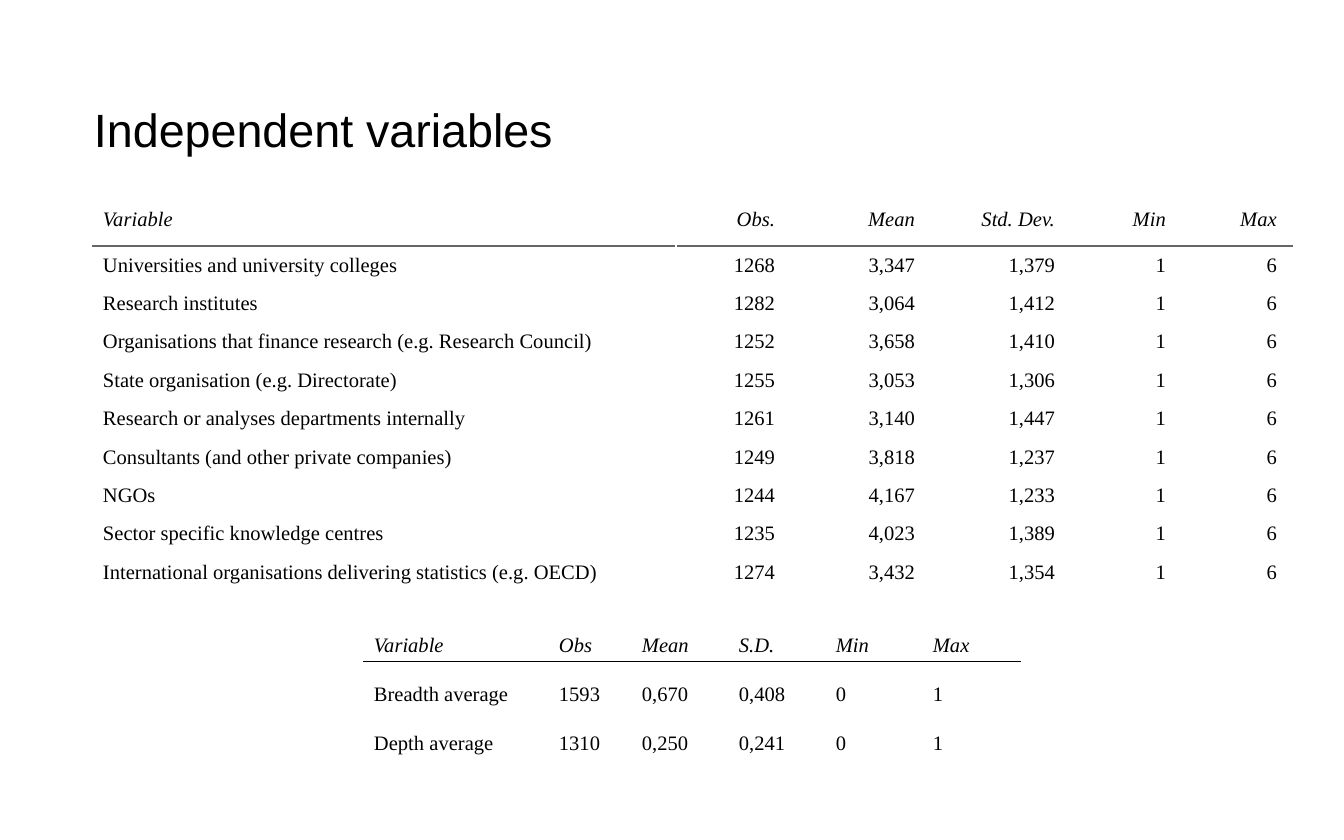
"""Build the slide with two tables of descriptive statistics for the independent variables."""
from dataclasses import dataclass

from lxml import etree
from pptx import Presentation
from pptx import util as u
from pptx.dml.color import RGBColor
from pptx.enum import text
from pptx.oxml import ns

PX = 914400 / 134.4
COLORS = {"text": "000000", "rule": "666666", "strong_rule": "000000"}
SERIF, SANS = "Times New Roman", "Arial"
LEFT, RIGHT = text.PP_ALIGN.LEFT, text.PP_ALIGN.RIGHT
MIDDLE, BOTTOM = text.MSO_ANCHOR.MIDDLE, text.MSO_ANCHOR.BOTTOM


@dataclass(frozen=True)
class StatTable:
    left: int
    top: int
    height: int
    head_height: int
    widths: tuple[int, ...]
    header: tuple[str, ...]
    rows: tuple[tuple[str, ...], ...]
    rule: str
    anchor: text.MSO_ANCHOR
    number_align: text.PP_ALIGN
    head_columns: tuple[int, ...]
    body_columns: tuple[int, ...]


SOURCES = StatTable(
    left=93, top=194, height=398, head_height=52,
    widths=(583, 40, 74, 140, 140, 111, 111),
    header=("Variable", "Obs.", "Mean", "Std. Dev.", "Min", "Max"),
    rows=(
        ("Universities and university colleges", "1268", "3,347", "1,379", "1", "6"),
        ("Research institutes", "1282", "3,064", "1,412", "1", "6"),
        ("Organisations that finance research (e.g. Research Council)",
         "1252", "3,658", "1,410", "1", "6"),
        ("State organisation (e.g. Directorate)", "1255", "3,053", "1,306", "1", "6"),
        ("Research or analyses departments internally", "1261", "3,140", "1,447", "1", "6"),
        ("Consultants (and other private companies)", "1249", "3,818", "1,237", "1", "6"),
        ("NGOs", "1244", "4,167", "1,233", "1", "6"),
        ("Sector specific knowledge centres", "1235", "4,023", "1,389", "1", "6"),
        ("International organisations delivering statistics (e.g. OECD)",
         "1274", "3,432", "1,354", "1", "6"),
    ),
    rule="rule", anchor=MIDDLE, number_align=RIGHT,
    head_columns=(0, 2, 3, 4, 5, 6), body_columns=(0, 1, 3, 4, 5, 6),
)
AVERAGES = StatTable(
    left=364, top=627, height=131, head_height=33,
    widths=(185, 83, 97, 97, 97, 97),
    header=("Variable", "Obs", "Mean", "S.D.", "Min", "Max"),
    rows=(
        ("Breadth average", "1593", "0,670", "0,408", "0", "1"),
        ("Depth average", "1310", "0,250", "0,241", "0", "1"),
    ),
    rule="strong_rule", anchor=BOTTOM, number_align=LEFT,
    head_columns=tuple(range(6)), body_columns=tuple(range(6)),
)


def px(value: float) -> u.Emu:
    return u.Emu(round(value * PX))


def style(p, size: int, name: str, italic: bool = False) -> None:
    p.font.size = u.Pt(size)
    p.font.name = name
    p.font.bold = False
    p.font.italic = italic
    p.font.color.rgb = RGBColor.from_string(COLORS["text"])


def set_margins(target, left: int, right: int) -> None:
    target.margin_left, target.margin_right = px(left), px(right)
    target.margin_top = target.margin_bottom = px(5)


def add_rule(cell, edge: str, color: str) -> None:
    ln = etree.Element(ns.qn(f"a:{edge}"), w=str(u.Pt(0.75)))
    fill = etree.SubElement(ln, ns.qn("a:solidFill"))
    etree.SubElement(fill, ns.qn("a:srgbClr"), val=COLORS[color])
    cell._tc.get_or_add_tcPr().insert(0, ln)


def add_title(s, title: str) -> None:
    tf = s.shapes.add_textbox(px(83), px(55), px(1159), px(147)).text_frame
    tf.word_wrap = True
    tf.vertical_anchor = MIDDLE
    set_margins(tf, 11, 11)
    p = tf.paragraphs[0]
    p.text = title
    style(p, 25, SANS)


def add_stat_table(s, spec_: StatTable) -> None:
    records = (spec_.header, *spec_.rows)
    frame = s.shapes.add_table(
        len(records), len(spec_.widths), px(spec_.left), px(spec_.top),
        px(sum(spec_.widths)), px(spec_.height))
    table = frame.table
    table.first_row = table.horz_banding = False
    for column, width in zip(table.columns, spec_.widths):
        column.width = px(width)
    body_height = (spec_.height - spec_.head_height) / len(spec_.rows)
    for i, record in enumerate(records):
        table.rows[i].height = px(body_height if i else spec_.head_height)
        for cell in table.rows[i].cells:
            cell.fill.background()
            if i < 2:
                add_rule(cell, "lnT" if i else "lnB", spec_.rule)
        starts = spec_.body_columns if i else spec_.head_columns
        ends = (*starts[1:], len(spec_.widths))
        for j, (value, start, end) in enumerate(zip(record, starts, ends)):
            cell = table.cell(i, start)
            if end - start > 1:
                cell.merge(table.cell(i, end - 1))
            cell.vertical_anchor = spec_.anchor
            set_margins(cell, 10, 15)
            p = cell.text_frame.paragraphs[0]
            p.text = value
            p.alignment = spec_.number_align if j else LEFT
            style(p, 11, SERIF, italic=i == 0)


def main() -> None:
    prs = Presentation()
    prs.slide_width, prs.slide_height = px(1344), px(840)
    s = prs.slides.add_slide(prs.slide_layouts[6])
    add_title(s, "Independent variables")
    for stats in (SOURCES, AVERAGES):
        add_stat_table(s, stats)
    prs.save("out.pptx")


if __name__ == "__main__":
    main()
